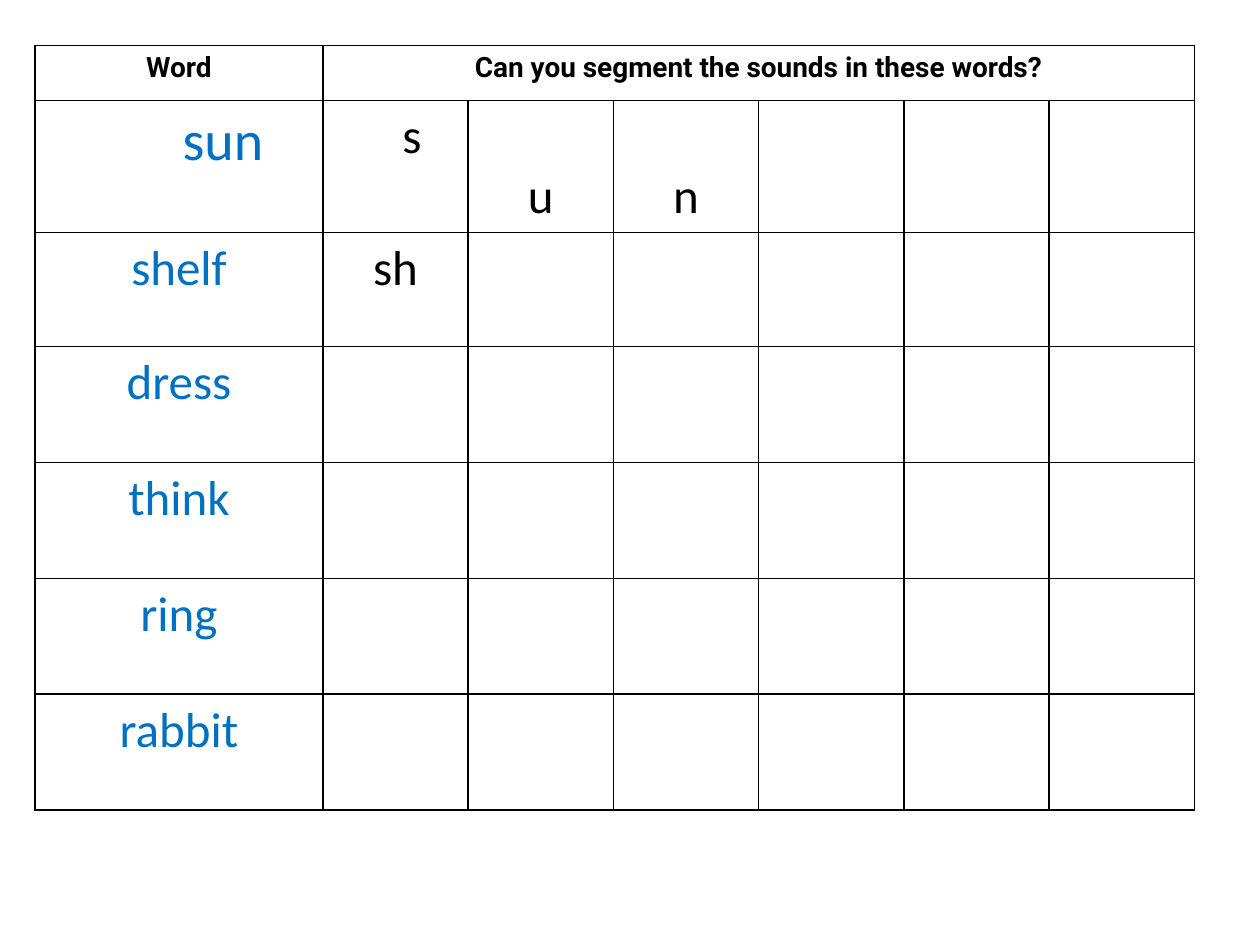
import pptx
import pptx.util
import pptx.dml.color
import pptx.enum.text
import pptx.oxml
import pptx.oxml.ns
from pptx.util import Pt

BLACK = pptx.dml.color.RGBColor(0x00, 0x00, 0x00)
BLUE = pptx.dml.color.RGBColor(0x00, 0x70, 0xC0)

ROW_HEIGHTS = [31.5, 75.5, 65] + [66.25] * 4
COLUMN_WIDTHS = [164.5] + [83] * 6
WORDS = ["sun", "shelf", "dress", "think", "ring", "rabbit"]


def write(cell, text, font_name, size, color, bold=False):
    cell.text_frame.text = text
    paragraph = cell.text_frame.paragraphs[0]
    paragraph.alignment = pptx.enum.text.PP_ALIGN.CENTER
    font = paragraph.runs[0].font
    font.name = font_name
    font.size = Pt(size)
    font.bold = bold
    font.color.rgb = color


def draw_borders(cell):
    properties = cell._tc.get_or_add_tcPr()
    for side in ("lnL", "lnR", "lnT", "lnB"):
        properties.append(pptx.oxml.parse_xml(
            f'<a:{side} {pptx.oxml.ns.nsdecls("a")} w="{Pt(1)}">'
            f'<a:solidFill><a:srgbClr val="{BLACK}"/></a:solidFill></a:{side}>'))


presentation = pptx.Presentation()
presentation.slide_width = Pt(720)
presentation.slide_height = Pt(540)
slide = presentation.slides.add_slide(presentation.slide_layouts[6])

# Grid: one row per word, one box per sound
grid = slide.shapes.add_table(
    len(ROW_HEIGHTS), len(COLUMN_WIDTHS), Pt(20), Pt(26),
    Pt(sum(COLUMN_WIDTHS)), Pt(sum(ROW_HEIGHTS))).table
grid.first_row = False
grid.horz_banding = False
for row, height in zip(grid.rows, ROW_HEIGHTS):
    row.height = Pt(height)
for column, width in zip(grid.columns, COLUMN_WIDTHS):
    column.width = Pt(width)
for cell in grid.iter_cells():
    draw_borders(cell)
    cell.fill.background()

# Header
grid.cell(0, 1).merge(grid.cell(0, 6))
write(grid.cell(0, 0), "Word", "Roboto", 16, BLACK, bold=True)
write(grid.cell(0, 1), "Can you segment the sounds in these words?",
      "Roboto", 16, BLACK, bold=True)

# Words
for row_number, word in enumerate(WORDS, start=1):
    write(grid.cell(row_number, 0), word, "Calibri",
          32 if word == "sun" else 28, BLUE)

# Sounds filled in as examples
for row_number, column_number, sound in [(1, 1, "s"), (1, 2, "u"),
                                         (1, 3, "n"), (2, 1, "sh")]:
    write(grid.cell(row_number, column_number), sound, "Calibri", 28, BLACK)
for column_number in (2, 3):
    grid.cell(1, column_number).vertical_anchor = pptx.enum.text.MSO_ANCHOR.BOTTOM

# The first word and its first sound sit right of centre
grid.cell(1, 0).margin_left = Pt(57.5)
grid.cell(1, 1).margin_left = Pt(26)

presentation.save("out.pptx")
